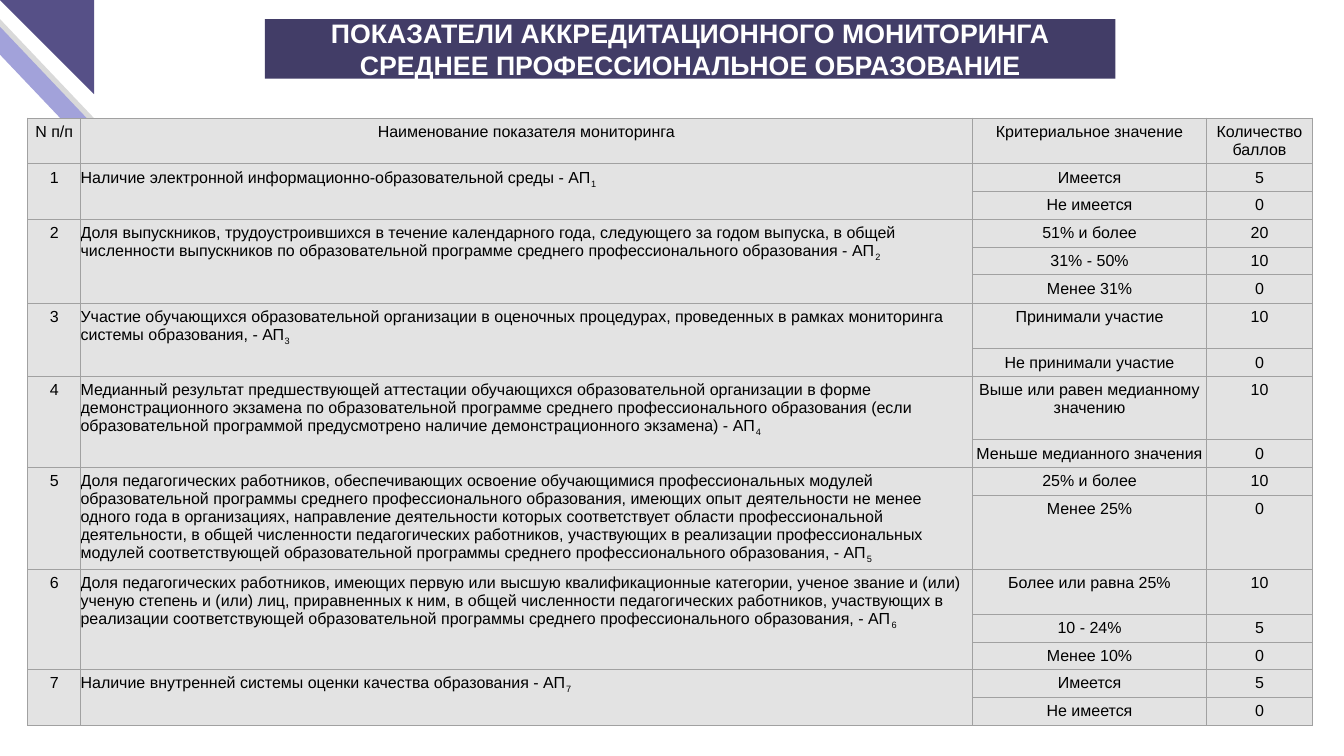
from lxml import etree
from pptx import Presentation
from pptx import util as u
from pptx.dml.color import RGBColor
from pptx.enum import shapes, text
from pptx.oxml import ns

WHITE = RGBColor(0xFF, 0xFF, 0xFF)
BLACK = RGBColor(0x00, 0x00, 0x00)
GREY = RGBColor(0xD9, 0xD9, 0xD9)
LILAC = RGBColor(0xA2, 0xA2, 0xDA)
VIOLET = RGBColor(0x56, 0x50, 0x87)
DARK_VIOLET = RGBColor(0x42, 0x3D, 0x67)
CELL_FILL = RGBColor(0xE3, 0xE3, 0xE3)
BORDER = RGBColor(0xA1, 0xA1, 0xA1)

presentation = Presentation()
presentation.slide_width = u.Inches(14)
presentation.slide_height = u.Inches(7.87)
slide = presentation.slides.add_slide(presentation.slide_layouts[6])
ONE_X = presentation.slide_width / 100   # one percent of the slide's width
ONE_Y = presentation.slide_height / 100  # one percent of the slide's height


def add_block(kind, left, top, width, height, color):
    """Add a plain filled shape placed in percent of the slide's size."""
    shape = slide.shapes.add_shape(kind, int(left * ONE_X), int(top * ONE_Y),
                                   int(width * ONE_X), int(height * ONE_Y))
    shape.shadow.inherit = False
    shape.fill.solid()
    shape.fill.fore_color.rgb = color
    shape.line.fill.background()
    return shape


def fill_cell(cell, content, align, subscript=""):
    """Write a cell's text, with an optional subscript, and style the cell."""
    cell.margin_left = cell.margin_right = 0
    cell.margin_top = cell.margin_bottom = u.Inches(0.05)
    paragraph = cell.text_frame.paragraphs[0]
    paragraph.alignment = align
    paragraph.font.size = u.Pt(12)
    paragraph.font.name = "Arial"
    paragraph.font.color.rgb = BLACK
    paragraph.add_run().text = content
    if subscript:
        run = paragraph.add_run()
        run.text = subscript
        run._r.get_or_add_rPr().set("baseline", "-25000")


# Corner decoration
for left, top, color in [(-2.57, 1.4, GREY), (-3.86, 0, LILAC)]:
    stripe = add_block(shapes.MSO_SHAPE.PARALLELOGRAM, left, top, 10.79, 16.52, color)
    stripe.adjustments[0] = 0.95
    stripe._element.spPr.xfrm.set("flipH", "1")
corner = add_block(shapes.MSO_SHAPE.RIGHT_TRIANGLE, 0, 0, 7, 12.45, VIOLET)
corner.rotation = 180

# Title
title = add_block(shapes.MSO_SHAPE.RECTANGLE, 19.71, 2.54, 63.29, 7.88, DARK_VIOLET)
frame = title.text_frame
frame.word_wrap = True
frame.vertical_anchor = text.MSO_ANCHOR.MIDDLE
frame.margin_left = frame.margin_right = 0
frame.margin_top = frame.margin_bottom = u.Inches(0.08)
frame.text = "ПОКАЗАТЕЛИ АККРЕДИТАЦИОННОГО МОНИТОРИНГА\nСРЕДНЕЕ ПРОФЕССИОНАЛЬНОЕ ОБРАЗОВАНИЕ"
for paragraph in frame.paragraphs:
    paragraph.alignment = text.PP_ALIGN.CENTER
    paragraph.font.size = u.Pt(20)
    paragraph.font.name = "Arial"
    paragraph.font.bold = True
    paragraph.font.color.rgb = WHITE

# Indicators: name, then (criterion, points) for each row
HEADERS = ["N п/п", "Наименование показателя мониторинга",
           "Критериальное значение", "Количество баллов"]
INDICATORS = [
    ("Наличие электронной информационно-образовательной среды - АП",
     [("Имеется", 5), ("Не имеется", 0)]),
    ("Доля выпускников, трудоустроившихся в течение календарного года, следующего "
     "за годом выпуска, в общей численности выпускников по образовательной программе "
     "среднего профессионального образования - АП",
     [("51% и более", 20), ("31% - 50%", 10), ("Менее 31%", 0)]),
    ("Участие обучающихся образовательной организации в оценочных процедурах, "
     "проведенных в рамках мониторинга системы образования, - АП",
     [("Принимали участие", 10), ("Не принимали участие", 0)]),
    ("Медианный результат предшествующей аттестации обучающихся образовательной "
     "организации в форме демонстрационного экзамена по образовательной программе "
     "среднего профессионального образования (если образовательной программой "
     "предусмотрено наличие демонстрационного экзамена) - АП",
     [("Выше или равен медианному значению", 10), ("Меньше медианного значения", 0)]),
    ("Доля педагогических работников, обеспечивающих освоение обучающимися "
     "профессиональных модулей образовательной программы среднего профессионального "
     "образования, имеющих опыт деятельности не менее одного года в организациях, "
     "направление деятельности которых соответствует области профессиональной "
     "деятельности, в общей численности педагогических работников, участвующих в "
     "реализации профессиональных модулей соответствующей образовательной программы "
     "среднего профессионального образования, - АП",
     [("25% и более", 10), ("Менее 25%", 0)]),
    ("Доля педагогических работников, имеющих первую или высшую квалификационные "
     "категории, ученое звание и (или) ученую степень и (или) лиц, приравненных к ним, "
     "в общей численности педагогических работников, участвующих в реализации "
     "соответствующей образовательной программы среднего профессионального "
     "образования, - АП",
     [("Более или равна 25%", 10), ("10 - 24%", 5), ("Менее 10%", 0)]),
    ("Наличие внутренней системы оценки качества образования - АП",
     [("Имеется", 5), ("Не имеется", 0)]),
]
COLUMN_SHARES = [3.93, 66.36, 17.43, 7.86]
ROW_SHARES = [5.34, 3.68, 3.68, 3.68, 3.68, 3.81, 5.97, 3.3, 8.39, 3.05,
              3.68, 9.02, 5.97, 3.68, 3.05, 3.68, 3.68]

table = slide.shapes.add_table(
    len(ROW_SHARES), len(COLUMN_SHARES), int(2.07 * ONE_X), int(15.63 * ONE_Y),
    int(sum(COLUMN_SHARES) * ONE_X), int(sum(ROW_SHARES) * ONE_Y)).table
table.first_row = table.horz_banding = False
for column, share in zip(table.columns, COLUMN_SHARES):
    column.width = int(share * ONE_X)
for row, share in zip(table.rows, ROW_SHARES):
    row.height = int(share * ONE_Y)

for cell in table.iter_cells():
    properties = cell._tc.get_or_add_tcPr()
    for side in ("a:lnL", "a:lnR", "a:lnT", "a:lnB"):
        line = etree.SubElement(properties, ns.qn(side), w=str(u.Pt(0.75)))
        line_fill = etree.SubElement(line, ns.qn("a:solidFill"))
        etree.SubElement(line_fill, ns.qn("a:srgbClr"), val=str(BORDER))
    cell.fill.solid()
    cell.fill.fore_color.rgb = CELL_FILL

CENTER, LEFT = text.PP_ALIGN.CENTER, text.PP_ALIGN.LEFT
for column_index, header in enumerate(HEADERS):
    fill_cell(table.cell(0, column_index), header, CENTER)

first = 1
for number, (name, criteria) in enumerate(INDICATORS, start=1):
    last = first + len(criteria) - 1
    for column_index in (0, 1):
        table.cell(first, column_index).merge(table.cell(last, column_index))
    fill_cell(table.cell(first, 0), str(number), CENTER)
    fill_cell(table.cell(first, 1), name, LEFT, subscript=str(number))
    for row_index, (criterion, points) in enumerate(criteria, start=first):
        fill_cell(table.cell(row_index, 2), criterion, CENTER)
        fill_cell(table.cell(row_index, 3), str(points), CENTER)
    first = last + 1

presentation.save("out.pptx")
